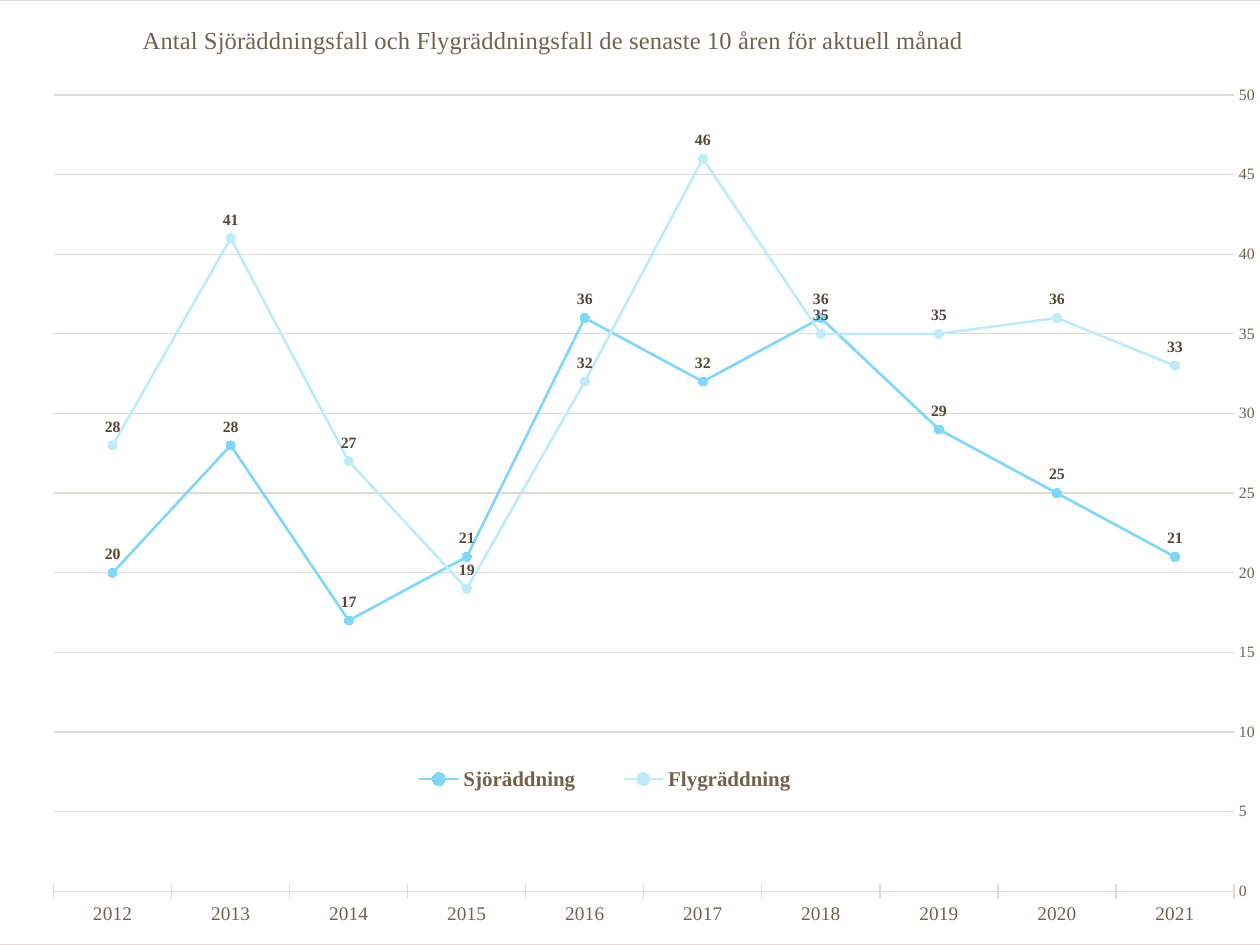
from dataclasses import dataclass

import lxml.etree
import pptx
import pptx.chart.data
import pptx.dml.color
import pptx.enum.chart
import pptx.oxml
import pptx.oxml.ns
import pptx.util

Inches = pptx.util.Inches
Pt = pptx.util.Pt
qn = pptx.oxml.ns.qn


@dataclass(frozen=True)
class Theme:
    font: str = "Times New Roman"
    text: str = "73604D"
    value_label: str = "564739"
    base: str = "0C0A08"
    rule: str = "E2DAD3"
    background: str = "FFFFFF"
    title_size: float = 14
    legend_size: float = 12
    year_size: float = 11
    base_size: float = 10
    small_size: float = 9
    rule_width: float = 0.75
    trend_width: float = 1.5


@dataclass(frozen=True)
class Rescue:
    name: str
    cases: tuple[int, ...]
    color: str


THEME = Theme()
YEARS = [str(year) for year in range(2021, 2011, -1)]
TITLE = "Antal Sjöräddningsfall och Flygräddningsfall de senaste 10 åren för aktuell månad"
RESCUES = (
    Rescue("Sjöräddning", (21, 25, 29, 36, 32, 36, 21, 17, 28, 20), "80D7F7"),
    Rescue("Flygräddning", (33, 36, 35, 35, 46, 32, 19, 27, 41, 28), "BFEBFB"),
)


def rgb(color: str) -> pptx.dml.color.RGBColor:
    return pptx.dml.color.RGBColor.from_string(color)


def apply(target, values: dict) -> None:
    for attribute, value in values.items():
        setattr(target, attribute, value)


def style_font(font, size: float, color: str, bold: bool = False) -> None:
    apply(font, {"name": THEME.font, "size": Pt(size), "bold": bold})
    font.color.rgb = rgb(color)


def style_line(line, color: str, width: float) -> None:
    line.color.rgb = rgb(color)
    line.width = Pt(width)


def place(element, index: int, **fractions: float) -> None:
    for previous in element.findall(qn("c:layout")):
        element.remove(previous)
    layout = lxml.etree.Element(qn("c:layout"))
    manual = lxml.etree.SubElement(layout, qn("c:manualLayout"))
    settings = {"xMode": "edge", "yMode": "edge", **fractions}
    if element.tag == qn("c:plotArea"):
        settings = {"layoutTarget": "inner", **settings}
    for tag, value in settings.items():
        lxml.etree.SubElement(manual, qn(f"c:{tag}")).set("val", str(value))
    element.insert(index, layout)


def frame_chart(chart) -> None:
    frame = pptx.oxml.parse_xml(
        f'<c:spPr {pptx.oxml.ns.nsdecls("c", "a")}>'
        f'<a:solidFill><a:srgbClr val="{THEME.background}"><a:alpha val="80000"/></a:srgbClr></a:solidFill>'
        f'<a:ln w="{Pt(THEME.rule_width)}"><a:solidFill><a:srgbClr val="{THEME.rule}"/></a:solidFill></a:ln>'
        "</c:spPr>"
    )
    chart.element.find(qn("c:chart")).addnext(frame)


def style_rescue(series, rescue: Rescue) -> None:
    series.smooth = False
    style_line(series.format.line, rescue.color, THEME.trend_width)
    apply(series.marker, {"style": pptx.enum.chart.XL_MARKER_STYLE.CIRCLE, "size": 5})
    series.marker.format.fill.solid()
    series.marker.format.fill.fore_color.rgb = rgb(rescue.color)
    style_line(series.marker.format.line, rescue.color, THEME.rule_width)
    labels = series.data_labels
    apply(labels, {"show_value": True, "position": pptx.enum.chart.XL_LABEL_POSITION.ABOVE})
    style_font(labels.font, THEME.small_size, THEME.value_label, bold=True)


def style_axes(chart) -> None:
    ticks = pptx.enum.chart.XL_TICK_MARK
    years, cases = chart.category_axis, chart.value_axis
    apply(years, {
        "reverse_order": True,
        "crosses": pptx.enum.chart.XL_AXIS_CROSSES.MAXIMUM,
        "major_tick_mark": ticks.CROSS,
        "minor_tick_mark": ticks.NONE,
        "has_major_gridlines": False,
    })
    apply(cases, {
        "minimum_scale": 0,
        "maximum_scale": 50,
        "major_unit": 5,
        "major_tick_mark": ticks.NONE,
        "minor_tick_mark": ticks.NONE,
        "has_major_gridlines": True,
    })
    style_font(years.tick_labels.font, THEME.year_size, THEME.text)
    style_font(cases.tick_labels.font, THEME.small_size, THEME.text)
    style_line(years.format.line, THEME.rule, THEME.rule_width)
    style_line(cases.major_gridlines.format.line, THEME.rule, THEME.rule_width)
    cases.format.line.fill.background()


def style_title(chart) -> None:
    chart.has_title = True
    heading = chart.chart_title.text_frame
    heading.text = TITLE
    style_font(heading.paragraphs[0].runs[0].font, THEME.title_size, THEME.text)
    place(chart.chart_title._element, 1, x=0.11, y=0.02)


def style_legend(chart) -> None:
    chart.has_legend = True
    apply(chart.legend, {
        "position": pptx.enum.chart.XL_LEGEND_POSITION.BOTTOM,
        "include_in_layout": True,
    })
    style_font(chart.legend.font, THEME.legend_size, THEME.text, bold=True)
    place(chart.legend._element, 1, x=0.3, y=0.8, w=0.36, h=0.05)


def add_rescue_chart(slide) -> None:
    statistics = pptx.chart.data.CategoryChartData()
    statistics.categories = YEARS
    for rescue in RESCUES:
        statistics.add_series(rescue.name, rescue.cases)
    chart = slide.shapes.add_chart(
        pptx.enum.chart.XL_CHART_TYPE.LINE_MARKERS,
        Inches(-0.01), Inches(0), Inches(10.02), Inches(7.5), statistics,
    ).chart
    style_font(chart.font, THEME.base_size, THEME.base)
    chart.plots[0].vary_by_categories = False
    for series, rescue in zip(chart.plots[0].series, RESCUES):
        style_rescue(series, rescue)
    style_axes(chart)
    style_title(chart)
    style_legend(chart)
    frame_chart(chart)
    plot_area = chart.element.find(f'{qn("c:chart")}/{qn("c:plotArea")}')
    place(plot_area, 0, x=0.043, y=0.1, w=0.936, h=0.844)


def main() -> None:
    presentation = pptx.Presentation()
    apply(presentation, {"slide_width": Inches(10), "slide_height": Inches(7.5)})
    add_rescue_chart(presentation.slides.add_slide(presentation.slide_layouts[6]))
    presentation.save("out.pptx")


if __name__ == "__main__":
    main()
